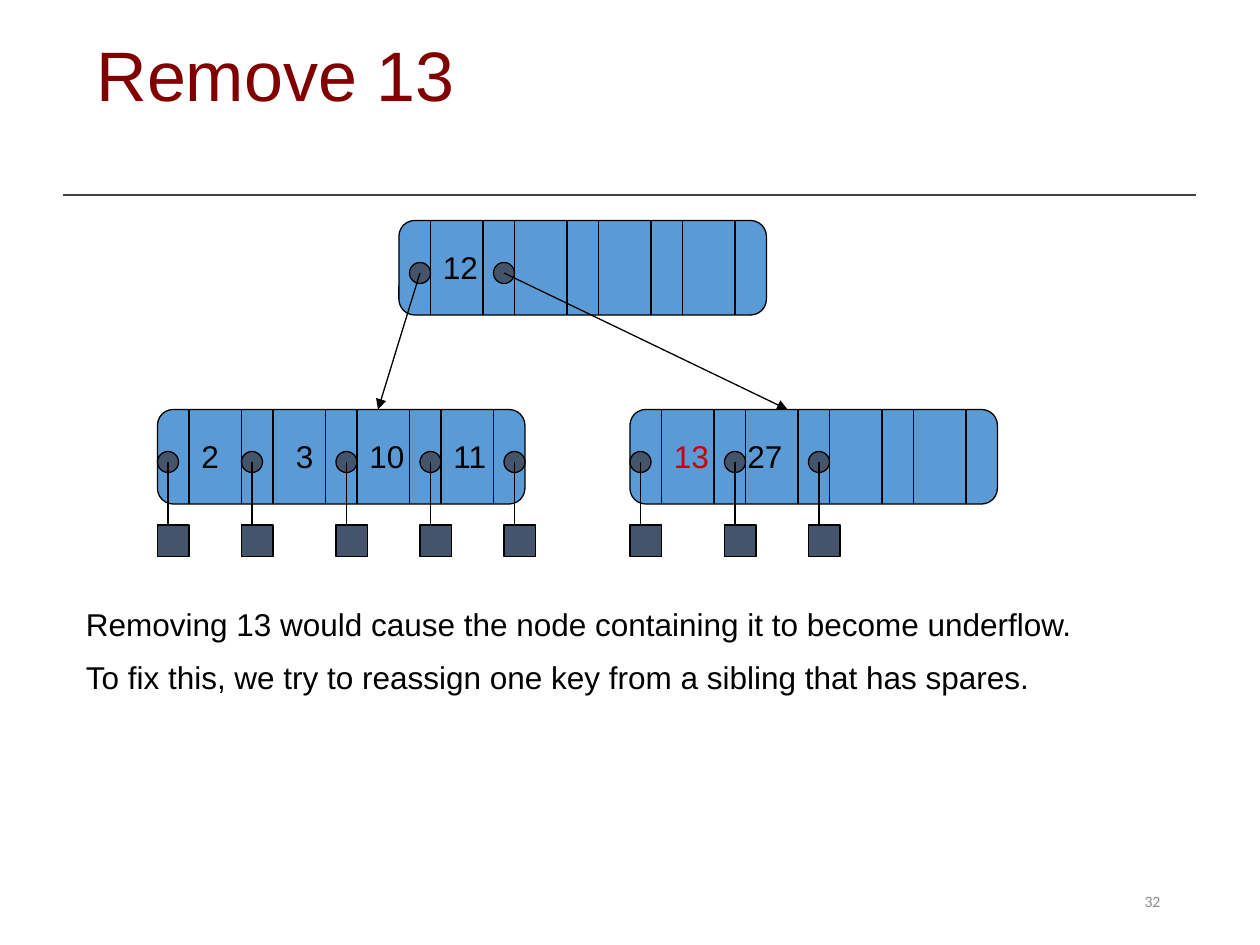
from lxml.etree import SubElement
from pptx import Presentation
from pptx.dml.color import RGBColor
from pptx.enum.shapes import MSO_CONNECTOR, MSO_SHAPE as Shape
from pptx.enum.text import MSO_ANCHOR as Anchor, PP_ALIGN as Align
from pptx.oxml.ns import qn
from pptx.util import Inches, Pt

deck = Presentation()
deck.slide_width, deck.slide_height = Inches(10), Inches(7.5)
UNIT = deck.slide_width / 120  # the slide is a grid of 120 columns by 90 rows
page = deck.slides.add_slide(deck.slide_layouts[5])
BLACK, BLUE, SLATE = "000000", "5B9BD5", "44546A"


def draw(kind, *cells, fill=None, width=0.75, color=BLACK, arrow=False):
    """Draw a preset shape (left, top, width, height) or a line (x1, y1, x2, y2) in grid units."""
    lengths = [round(cell * UNIT) for cell in cells]
    if kind == "line":
        item = page.shapes.add_connector(MSO_CONNECTOR.STRAIGHT, *lengths)
        SubElement(item.line._get_or_add_ln().getparent(), qn("a:effectLst"))
    else:
        item = page.shapes.add_shape(kind, *lengths)
        item.shadow.inherit = False
        item.fill.solid()
        item.fill.fore_color.rgb = RGBColor.from_string(fill)
    item.line.color.rgb = RGBColor.from_string(color)
    item.line.width = Pt(width)
    if arrow:
        SubElement(item.line._get_or_add_ln(), qn("a:tailEnd"), type="triangle")


def write(box, cells, lines, size=18, color=BLACK, font="Arial", wrap=True,
          anchor=Anchor.TOP, **layout):
    """Place a box in grid units and fill it with one paragraph per line."""
    for name, cell in zip(("left", "top", "width", "height"), cells):
        setattr(box, name, round(cell * UNIT))
    frame = box.text_frame
    frame.word_wrap, frame.vertical_anchor = wrap, anchor
    for index, line in enumerate(lines):
        para = frame.add_paragraph() if index else frame.paragraphs[0]
        span = para.add_run()
        span.text = line
        for name, value in {"size": Pt(size), "name": font}.items():
            setattr(span.font, name, value)
        span.font.color.rgb = RGBColor.from_string(color)
        for name, value in layout.items():
            if index or name != "space_before":
                setattr(para, name, value)


def new_box():
    return page.shapes.add_textbox(0, 0, 0, 0)


write(page.shapes.title, (8, 2, 102, 11), ["Remove 13"], size=40, color="800000",
      anchor=Anchor.MIDDLE, alignment=Align.LEFT, line_spacing=0.9)
draw("line", 6, 18.6, 113.9, 18.6, width=1, color="404040")

# Each node: left, top, keys as (offset, text), pointer offsets, whether it is a leaf
nodes = [
    (15, 39, [(3, "2"), (12, "3"), (19, "10"), (27, "11")], [0, 8, 17, 25, 33], True),
    (38, 21, [(3, "12")], [1, 9], False),
    (60, 39, [(3, "13"), (10, "27")], [0, 9, 17], True),
]
KEY_PITCH = 8
for left, top, keys, pointers, is_leaf in nodes:
    draw(Shape.ROUNDED_RECTANGLE, left, top, 35, 9, fill=BLUE)
    for offset, key in keys:
        write(new_box(), (left + offset, top + 2, 2.5 + 1.8 * len(key), 5), [key],
              wrap=False, color="CC0000" if key == "13" else BLACK)
    for slot in range(4):
        for edge in (3, 8):
            x = left + slot * KEY_PITCH + edge
            draw("line", x, top, x, top + 9)
    for offset in pointers:
        x = left + offset
        draw(Shape.OVAL, x, top + 4, 2, 2, fill=SLATE)
        if is_leaf:
            draw("line", x + 1, top + 5, x + 1, top + 13, arrow=True)
            draw(Shape.RECTANGLE, x, top + 11, 3, 3, fill=SLATE)

for start, end in ((40, 36), (48, 75)):
    draw("line", start, 26, end, 39, arrow=True)

write(new_box(), (7, 57, 107, 15.7), [
    "Removing 13 would cause the node containing it to become underflow.",
    "To fix this, we try to reassign one key from a sibling that has spares.",
], space_before=Pt(9))
write(new_box(), (84.7, 83.4, 27, 4.8), ["32"], size=9, color="8C8C8C", font="Calibri",
      anchor=Anchor.MIDDLE, alignment=Align.RIGHT)

deck.save("out.pptx")
